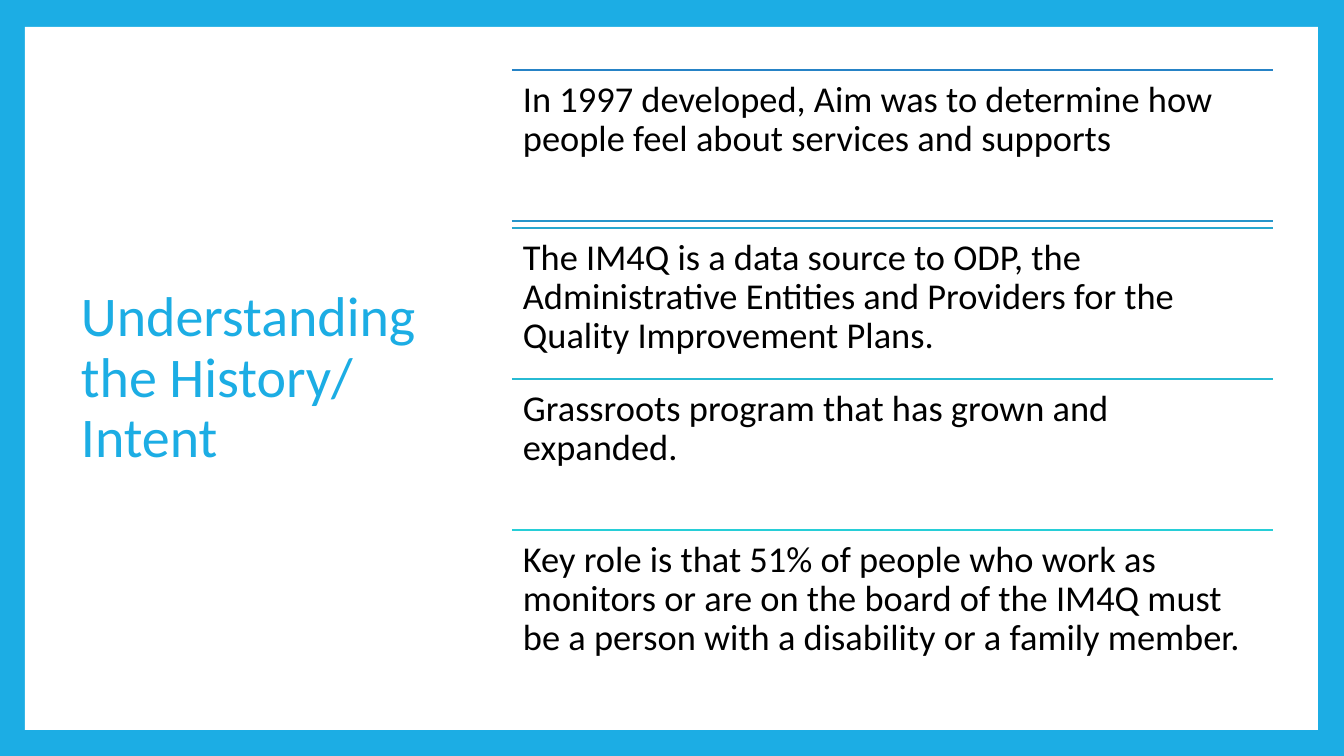
import pptx
import pptx.util
import pptx.dml.color
import pptx.enum.shapes
import pptx.enum.text
import pptx.oxml.ns
import lxml.etree

TITLE = "Understanding the History/ Intent"
POINTS = [
    "In 1997 developed, Aim was to determine how people feel about services and supports",
    "The IM4Q is a data source to ODP, the Administrative Entities and Providers for the Quality Improvement Plans.",
    "Grassroots program that has grown and expanded.",
    "Key role is that 51% of people who work as monitors or are on the board of the IM4Q must be a person with a disability or a family member.",
]
COLORS = {
    "frame": "1CADE4",
    "panel": "FFFFFF",
    "text": "000000",
    "rule_1": "2683C6",
    "rule_1_end": "2695CA",
    "rule_2": "27A7CE",
    "rule_3": "27BAD3",
    "rule_4": "27CED7",
}
SLIDE_WIDTH, SLIDE_HEIGHT = 1344, 756
PANEL_BOX = (25, 27, 1293, 703)
TITLE_BOX = (70, 71, 377, 616)
LIST_LEFT, LIST_TOP, LIST_WIDTH = 512, 70, 761
ROW_HEIGHT, FIRST_ROW_GAP = 151, 7
INSET = 11


def px(length):
    return pptx.util.Emu(round(length * 914400 / 100.8))


def color(name):
    return pptx.dml.color.RGBColor.from_string(COLORS[name])


def add_text(slide, text, box, *, size, ink, anchor=pptx.enum.text.MSO_ANCHOR.TOP):
    shape = slide.shapes.add_textbox(*map(px, box))
    frame = shape.text_frame
    frame.word_wrap = True
    frame.vertical_anchor = anchor
    frame.margin_left = frame.margin_right = px(INSET)
    frame.margin_top = frame.margin_bottom = px(INSET)
    paragraph = frame.paragraphs[0]
    paragraph.line_spacing = 0.9
    run = paragraph.add_run()
    run.text = text
    run.font.name = "Calibri"
    run.font.size = pptx.util.Pt(size)
    run.font.color.rgb = color(ink)


def add_rule(slide, y, ink):
    rule = slide.shapes.add_connector(
        pptx.enum.shapes.MSO_CONNECTOR.STRAIGHT,
        px(LIST_LEFT), px(y), px(LIST_LEFT + LIST_WIDTH), px(y),
    )
    rule.line.color.rgb = color(ink)
    rule.line.width = pptx.util.Pt(1.5)
    lxml.etree.SubElement(rule._element.spPr, pptx.oxml.ns.qn("a:effectLst"))


def main():
    presentation = pptx.Presentation()
    presentation.slide_width = px(SLIDE_WIDTH)
    presentation.slide_height = px(SLIDE_HEIGHT)
    slide = presentation.slides.add_slide(presentation.slide_layouts[6])
    slide.background.fill.solid()
    slide.background.fill.fore_color.rgb = color("frame")

    panel = slide.shapes.add_shape(
        pptx.enum.shapes.MSO_SHAPE.RECTANGLE, *map(px, PANEL_BOX)
    )
    panel.shadow.inherit = False
    panel.fill.solid()
    panel.fill.fore_color.rgb = color("panel")
    panel.line.fill.background()

    add_text(slide, TITLE, TITLE_BOX, size=40, ink="frame",
             anchor=pptx.enum.text.MSO_ANCHOR.MIDDLE)

    for index, point in enumerate(POINTS):
        top = LIST_TOP + index * ROW_HEIGHT + (FIRST_ROW_GAP if index else 0)
        add_rule(slide, top, f"rule_{index + 1}")
        add_text(slide, point, (LIST_LEFT, top, LIST_WIDTH, ROW_HEIGHT),
                 size=26, ink="text")
    add_rule(slide, LIST_TOP + ROW_HEIGHT, "rule_1_end")

    presentation.save("out.pptx")


if __name__ == "__main__":
    main()
